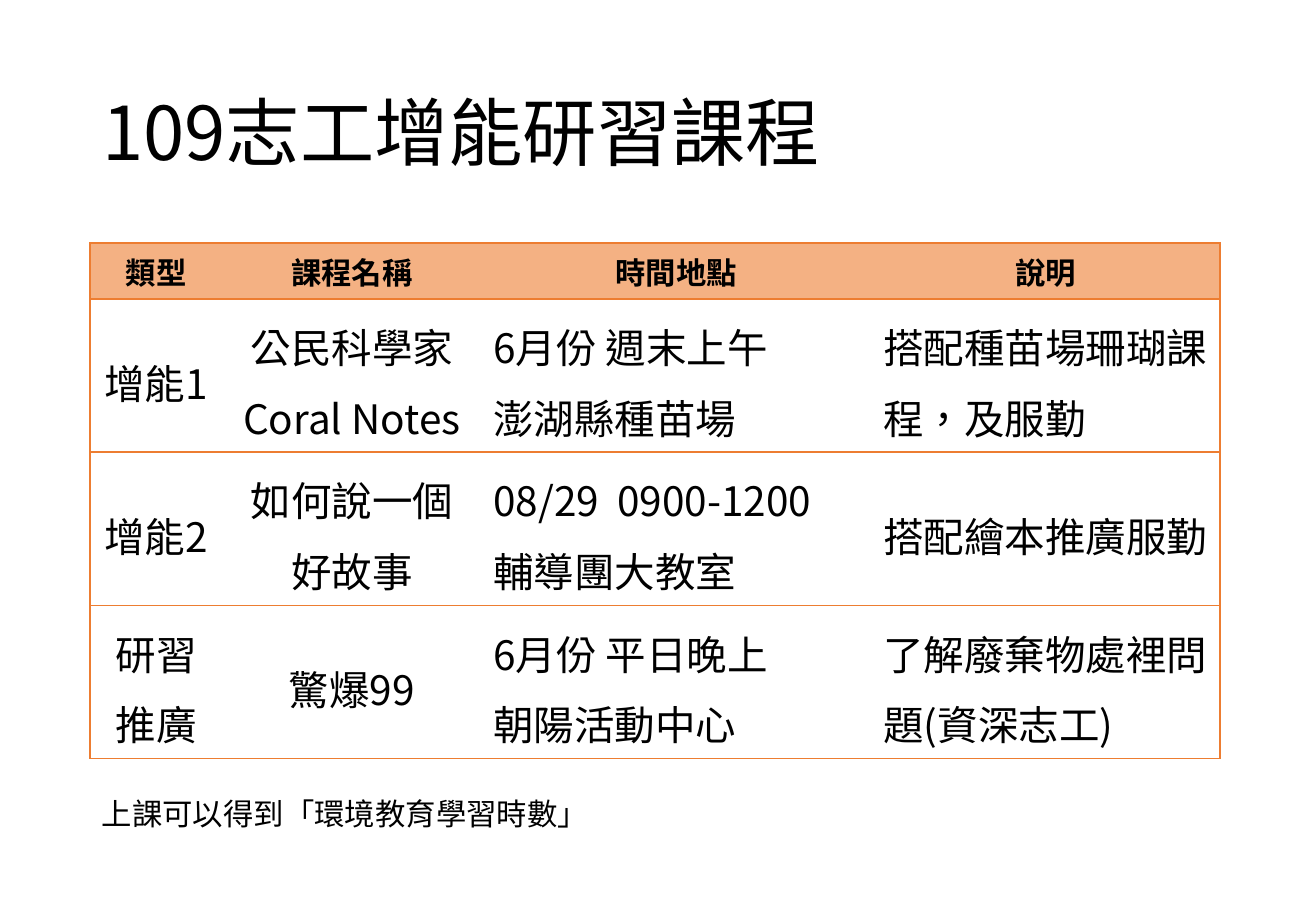
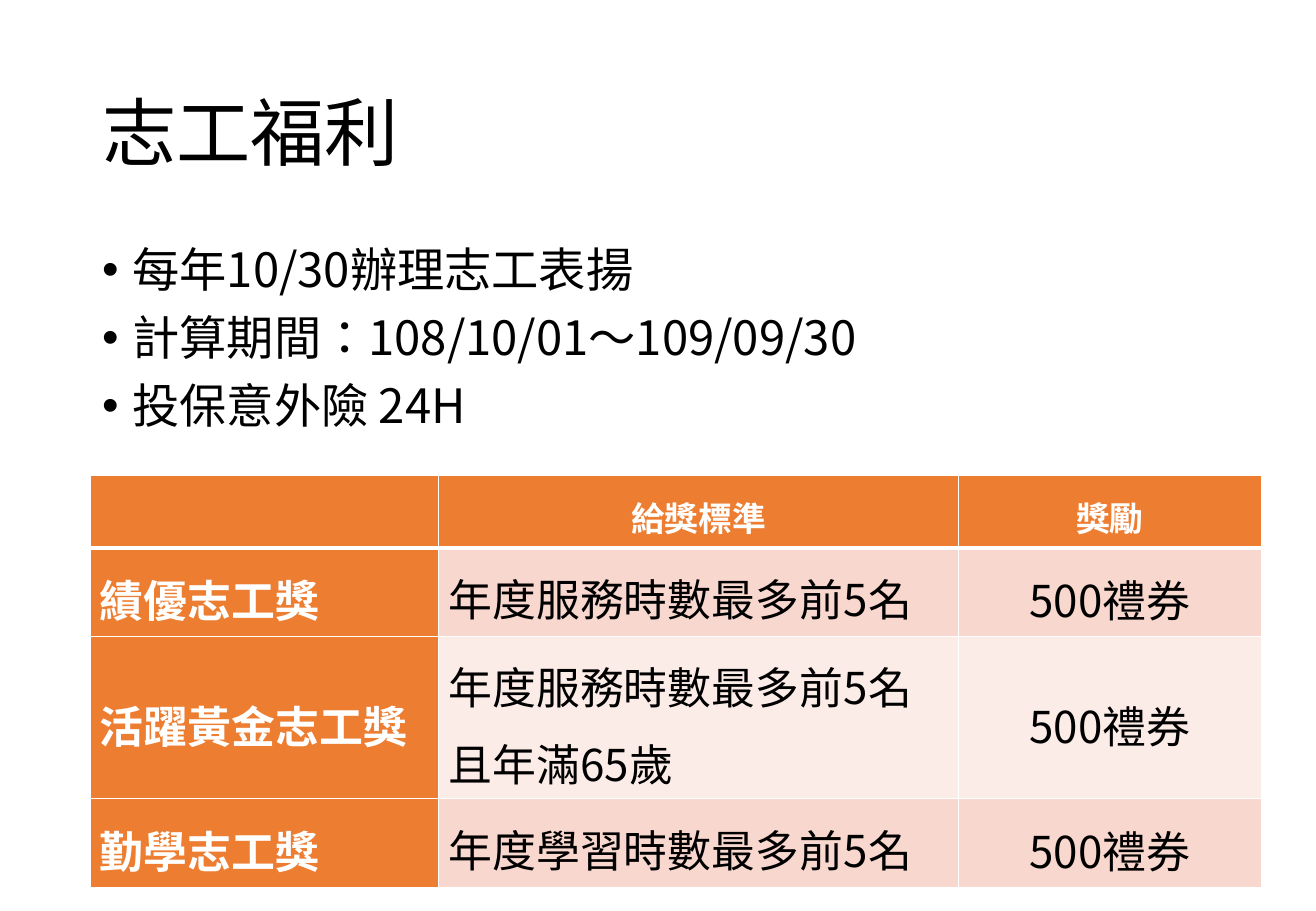
from dataclasses import dataclass
from typing import Optional

import pptx
import pptx.dml.color
import pptx.enum.text
import pptx.oxml
import pptx.oxml.ns
import pptx.util
from pptx.util import Inches, Pt

ALIGN = pptx.enum.text.PP_ALIGN
ANCHOR = pptx.enum.text.MSO_ANCHOR
LATIN_FONT, ASIAN_FONT = "Noto Sans CJK JP", "Noto Sans CJK TC"
LANGUAGE = "zh-TW"
PLAIN_TABLE = "{2D5ABB26-0587-4C30-8999-92F81FD0307C}"
LEFT = 0.74
COLORS = {
    "text": "000000",
    "white": "FFFFFF",
    "accent": "ED7D31",
    "header": "F4B183",
    "band_dark": "F8D7CE",
    "band_light": "FCECE8",
}


@dataclass(frozen=True)
class TextStyle:
    size: float
    color: str = "text"
    bold: bool = False
    align: ALIGN = ALIGN.LEFT
    spacing: float = 1.0
    before: float = 0


@dataclass(frozen=True)
class CellStyle:
    text: TextStyle
    anchor: ANCHOR = ANCHOR.MIDDLE
    fill: Optional[str] = None


@dataclass(frozen=True)
class Grid:
    """A table; a newline starts a paragraph, a vertical tab breaks a line."""
    top: float
    widths: tuple[float, ...]
    heights: tuple[float, ...]
    rows: tuple[tuple[str, ...], ...]
    header: CellStyle
    columns: tuple[CellStyle, ...]
    rule: str
    bands: tuple[str, ...] = ()
    header_rule: float = 1
    inner_verticals: bool = False
    margins: tuple[float, float] = (0.1, 0.05)


TITLE = TextStyle(44, spacing=0.9)
BULLET = TextStyle(28, spacing=0.9, before=10)
NOTE = TextStyle(18)

COURSE_CENTER = CellStyle(TextStyle(24, align=ALIGN.CENTER, spacing=1.2))
COURSE_LEFT = CellStyle(TextStyle(24, spacing=1.2))
COURSES = Grid(
    top=2,
    widths=(1.09, 2.13, 3.21, 2.87),
    heights=(0.46, 1.26, 1.26, 1.26),
    rows=(
        ("類型", "課程名稱", "時間地點", "說明"),
        ("增能1", "公民科學家\nCoral Notes", "6月份 週末上午\n澎湖縣種苗場",
         "搭配種苗場珊瑚課程，及服勤"),
        ("增能2", "如何說一個\v好故事", "08/29  0900-1200\n輔導團大教室",
         "搭配繪本推廣服勤"),
        ("研習\v推廣", "驚爆99", "6月份 平日晚上\n朝陽活動中心",
         "了解廢棄物處裡問題(資深志工)"),
    ),
    header=CellStyle(TextStyle(18, bold=True, align=ALIGN.CENTER), ANCHOR.TOP, "header"),
    columns=(COURSE_CENTER, COURSE_CENTER, COURSE_LEFT, COURSE_LEFT),
    rule="accent",
)

AWARDS = Grid(
    top=3.91,
    widths=(2.87, 4.28, 2.49),
    heights=(0.6, 0.73, 1.33, 0.73),
    rows=(
        ("", "給獎標準", "獎勵"),
        ("績優志工獎", "年度服務時數最多前5名", "500禮券"),
        ("活躍黃金志工獎", "年度服務時數最多前5名\v且年滿65歲", "500禮券"),
        ("勤學志工獎", "年度學習時數最多前5名", "500禮券"),
    ),
    header=CellStyle(TextStyle(20, "white", True, ALIGN.CENTER, 1.2), fill="accent"),
    columns=(
        CellStyle(TextStyle(26, "white", True, spacing=1.2), fill="accent"),
        CellStyle(TextStyle(26, spacing=1.2), ANCHOR.TOP),
        CellStyle(TextStyle(26, align=ALIGN.CENTER, spacing=1.2)),
    ),
    rule="white",
    bands=("band_dark", "band_light"),
    header_rule=3,
    inner_verticals=True,
    margins=(0.08, 0.04),
)


def rgb(name: str) -> pptx.dml.color.RGBColor:
    return pptx.dml.color.RGBColor.from_string(COLORS[name])


def write(tf, text: str, style: TextStyle) -> None:
    tf.text = text
    for p in tf.paragraphs:
        p.alignment = style.align
        p.line_spacing = style.spacing
        p.space_before = Pt(style.before)
        p.font.size = Pt(style.size)
        p.font.bold = style.bold
        p.font.color.rgb = rgb(style.color)
        p.font.name = LATIN_FONT
        latin = p._p.pPr.find(".//" + pptx.oxml.ns.qn("a:latin"))
        latin.getparent().set("lang", LANGUAGE)
        latin.addnext(pptx.oxml.parse_xml(
            f'<a:ea {pptx.oxml.ns.nsdecls("a")} typeface="{ASIAN_FONT}"/>'))


def place(sp, left: float, top: float, width: float, height: float) -> None:
    sp.left, sp.top = Inches(left), Inches(top)
    sp.width, sp.height = Inches(width), Inches(height)


def add_titled_slide(prs, layout: int, title: str):
    s = prs.slides.add_slide(prs.slide_layouts[layout])
    sp = s.shapes.title
    place(sp, LEFT, 0.4, 9.34, 1.45)
    tf = sp.text_frame
    tf.auto_size = pptx.enum.text.MSO_AUTO_SIZE.NONE
    tf.vertical_anchor = ANCHOR.MIDDLE
    write(tf, title, TITLE)
    return s


def add_bullets(s, text: str) -> None:
    sp = s.placeholders[1]
    place(sp, LEFT, 1.98, 9.64, 3.87)
    tf = sp.text_frame
    tf.auto_size = pptx.enum.text.MSO_AUTO_SIZE.NONE
    write(tf, text, BULLET)
    for p in tf.paragraphs:
        pPr = p._p.get_or_add_pPr()
        pPr.set("marL", str(Inches(0.25)))
        pPr.set("indent", str(Inches(-0.25)))


def add_note(s, text: str) -> None:
    sp = s.shapes.add_textbox(Inches(LEFT), Inches(6.5), Inches(4.24), Inches(0.4))
    tf = sp.text_frame
    tf.word_wrap = False
    tf.auto_size = pptx.enum.text.MSO_AUTO_SIZE.SHAPE_TO_FIT_TEXT
    write(tf, text, NOTE)


def set_borders(cell, color: str, widths: dict[str, float]) -> None:
    """Draw the cell's edges, keyed L, R, T and B in that order; 0 draws none."""
    tcPr = cell._tc.get_or_add_tcPr()
    for edge, width in widths.items():
        paint = (f'<a:solidFill><a:srgbClr val="{COLORS[color]}"/></a:solidFill>'
                 if width else "<a:noFill/>")
        tcPr.append(pptx.oxml.parse_xml(
            f'<a:ln{edge} {pptx.oxml.ns.nsdecls("a")} w="{Pt(width)}">{paint}</a:ln{edge}>'))


def add_grid(s, grid: Grid) -> None:
    n_rows, n_cols = len(grid.heights), len(grid.widths)
    table = s.shapes.add_table(
        n_rows, n_cols, Inches(LEFT), Inches(grid.top),
        Inches(sum(grid.widths)), Inches(sum(grid.heights))).table
    table._tbl.tblPr.find(pptx.oxml.ns.qn("a:tableStyleId")).text = PLAIN_TABLE
    table.horz_banding = False
    for column, width in zip(table.columns, grid.widths):
        column.width = Inches(width)
    for row, height in zip(table.rows, grid.heights):
        row.height = Inches(height)
    for r, texts in enumerate(grid.rows):
        for c, text in enumerate(texts):
            cell = table.cell(r, c)
            style = grid.columns[c] if r else grid.header
            set_borders(cell, grid.rule, {
                "L": int(grid.inner_verticals or c == 0),
                "R": int(grid.inner_verticals or c == n_cols - 1),
                "T": grid.header_rule if r == 1 else 1,
                "B": grid.header_rule if r == 0 else 1,
            })
            fill = style.fill
            if fill is None and grid.bands:
                fill = grid.bands[(r - 1) % len(grid.bands)]
            if fill:
                cell.fill.solid()
                cell.fill.fore_color.rgb = rgb(fill)
            else:
                cell.fill.background()
            side, end = map(Inches, grid.margins)
            cell.margin_left = cell.margin_right = side
            cell.margin_top = cell.margin_bottom = end
            cell.vertical_anchor = style.anchor
            if text:
                write(cell.text_frame, text, style.text)


def main() -> None:
    prs = pptx.Presentation()
    prs.slide_width, prs.slide_height = Inches(10.83), Inches(7.5)

    s = add_titled_slide(prs, 5, "109志工增能研習課程")
    add_grid(s, COURSES)
    add_note(s, "上課可以得到「環境教育學習時數」")

    s = add_titled_slide(prs, 1, "志工福利")
    add_bullets(s, "每年10/30辦理志工表揚\n計算期間：108/10/01～109/09/30\n投保意外險 24H")
    add_grid(s, AWARDS)

    prs.save("out.pptx")


if __name__ == "__main__":
    main()
